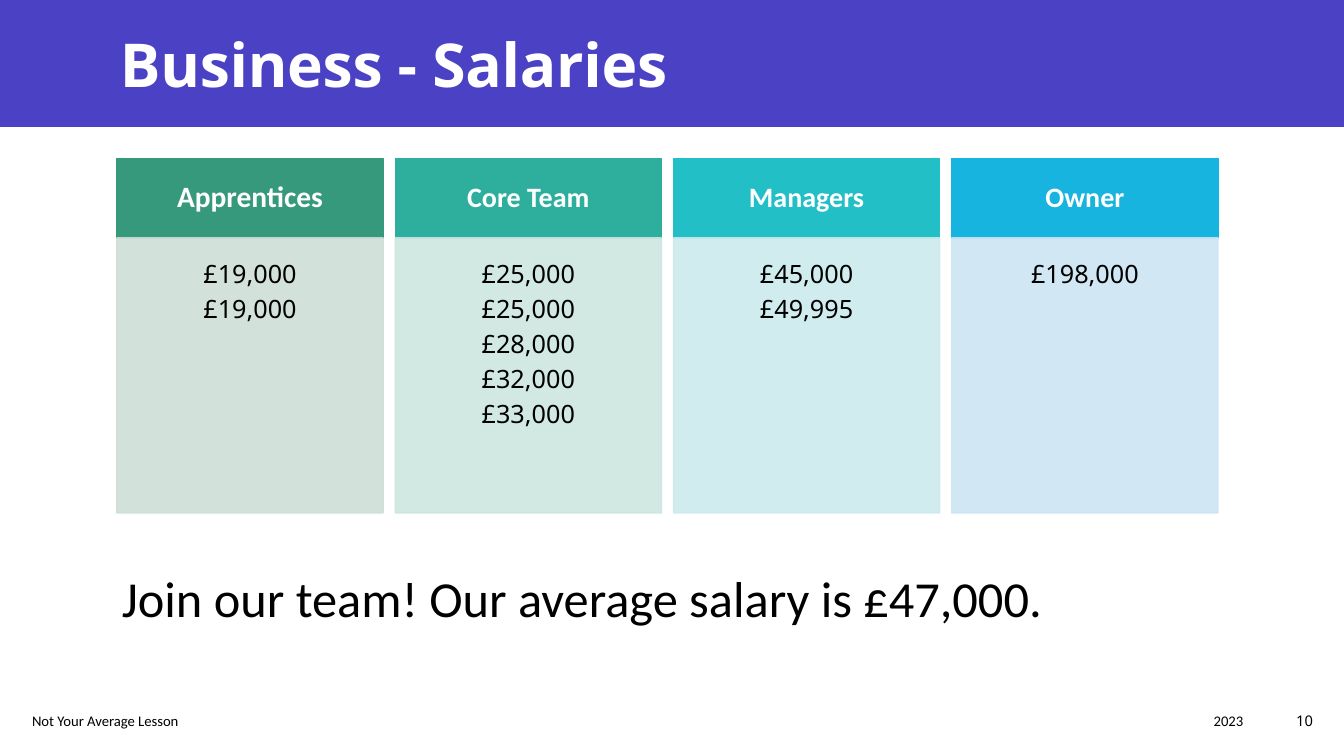
"""Build the business salaries slide with four pay columns."""
from lxml import etree
from pptx import Presentation
from pptx import util as u
from pptx.dml.color import RGBColor
from pptx.enum import shapes, text
from pptx.oxml.ns import qn

TITLE = "Business - Salaries"
PAY = [
    ("Apprentices", 21, "37997B", "CEDED7", ["£19,000", "£19,000"]),
    ("Core Team", 20, "2EAF9E", "CCE6E1",
     ["£25,000", "£25,000", "£28,000", "£32,000", "£33,000"]),
    ("Managers", 20, "23BFC6", "CCEAED", ["£45,000", "£49,995"]),
    ("Owner", 20, "17B4DF", "CCE5F3", ["£198,000"]),
]
LEFT, RIGHT, MIDDLE = text.PP_ALIGN.LEFT, text.PP_ALIGN.RIGHT, text.MSO_ANCHOR.MIDDLE
CENTER, TOP = text.PP_ALIGN.CENTER, text.MSO_ANCHOR.TOP
LABELS = [
    ("Join our team! Our average salary is £47,000.",
     (1.11, 5.58, 10.97, 0.71), 36, "Calibri", LEFT, TOP),
    ("Not Your Average Lesson", (0.22, 6.95, 4.1, 0.4), 10.5, "Calibri", LEFT, MIDDLE),
    ("2023", (7.67, 6.95, 4.76, 0.4), 10.5, "Calibri", RIGHT, MIDDLE),
    ("10", (12.43, 6.95, 0.69, 0.4), 10.5, "Noto Sans", RIGHT, MIDDLE),
]
WIDTH, HEIGHT, BAND = 13.33, 7.5, 1.26
GRID_LEFT, GRID_TOP, COL, PITCH = 1.16, 1.57, 2.64, 2.76
HEAD, BODY = 0.79, 2.73


def color(value):
    return RGBColor.from_string(value)


def inches(box):
    return [u.Inches(v) for v in box]


def write(sp, lines, size, name, ink, align, anchor, bold=False, inset=None, **spacing):
    tf = sp.text_frame
    frame = {"word_wrap": True, "vertical_anchor": anchor,
             "auto_size": text.MSO_AUTO_SIZE.NONE}
    if inset is not None:
        for side in ("left", "top", "right", "bottom"):
            frame["margin_" + side] = u.Inches(inset)
    for key, value in frame.items():
        setattr(tf, key, value)
    for i, line in enumerate(lines):
        p = tf.add_paragraph() if i else tf.paragraphs[0]
        for key, value in {"alignment": align, **spacing}.items():
            setattr(p, key, value)
        r = p.add_run()
        r.text = line
        for key, value in {"size": u.Pt(size), "name": name, "bold": bold}.items():
            setattr(r.font, key, value)
        r.font.color.rgb = color(ink)


def block(s, box, fill, outlined=True, opacity=100):
    sp = s.shapes.add_shape(shapes.MSO_SHAPE.RECTANGLE, *inches(box))
    sp.shadow.inherit = False
    sp.fill.solid()
    sp.fill.fore_color.rgb = color(fill)
    if outlined:
        sp.line.color.rgb = color(fill)
        sp.line.width = u.Pt(1)
    else:
        sp.line.fill.background()
    if opacity < 100:
        for clr in sp._element.spPr.iter(qn("a:srgbClr")):
            etree.SubElement(clr, qn("a:alpha")).set("val", str(opacity * 1000))
    return sp


def main():
    prs = Presentation()
    prs.slide_width, prs.slide_height = inches((WIDTH, HEIGHT))
    s = prs.slides.add_slide(prs.slide_layouts[5])

    band = block(s, (0, 0, WIDTH, BAND), "4A41C5", outlined=False)
    title = s.shapes.title
    title._element.addprevious(band._element)
    title.left, title.top, title.width, title.height = inches((1.09, 0.21, 10.96, 0.83))
    write(title, [TITLE], 43.2, "Noto Sans", "FFFFFF", LEFT, MIDDLE, bold=True)
    title.text_frame.paragraphs[0].runs[0]._r.get_or_add_rPr().set("spc", "-20")

    for i, (role, size, dark, pale, salaries) in enumerate(PAY):
        x = GRID_LEFT + i * PITCH
        head = block(s, (x, GRID_TOP, COL, HEAD), dark)
        write(head, [role], size, "Calibri", "FFFFFF", CENTER, MIDDLE,
              bold=True, inset=0.21, line_spacing=0.9)
        body = block(s, (x, GRID_TOP + HEAD, COL, BODY), pale, opacity=90)
        write(body, salaries, 18, "Noto Sans", "000000", CENTER, TOP,
              inset=0.2, space_after=u.Pt(3.4))

    for label, box, size, name, align, anchor in LABELS:
        sp = s.shapes.add_textbox(*inches(box))
        write(sp, [label], size, name, "000000", align, anchor)

    prs.save("out.pptx")


if __name__ == "__main__":
    main()
